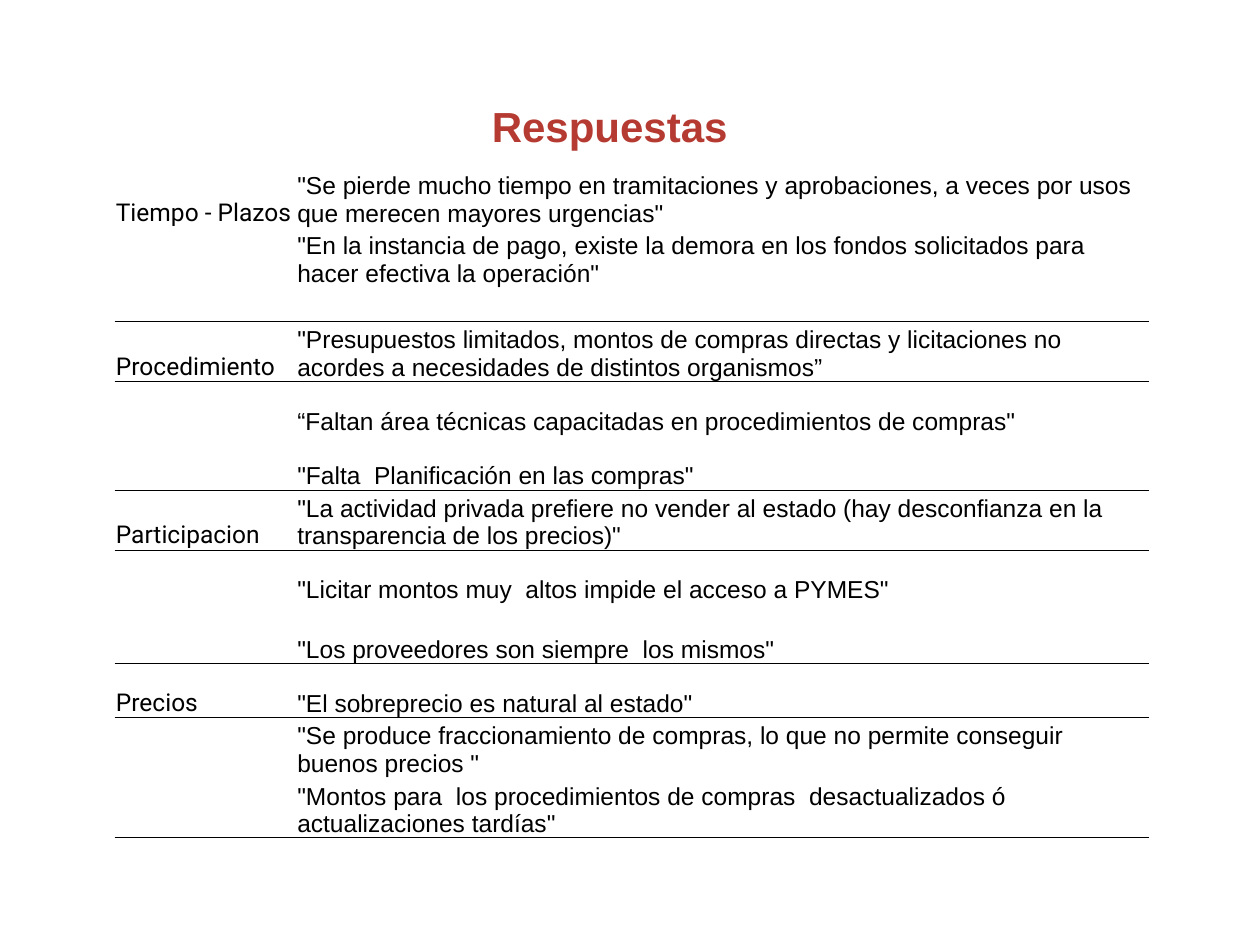
"""Build the slide of survey answers grouped by topic."""
import lxml.etree
import pptx
import pptx.dml.color
import pptx.enum.text
import pptx.oxml.ns
import pptx.util

THEME = {
    "title": {"name": "Arial", "size": pptx.util.Pt(24), "bold": True, "color": "B53A31"},
    "topic": {"name": "Roboto", "size": pptx.util.Pt(14), "bold": False, "color": "000000"},
    "answer": {"name": "Arial", "size": pptx.util.Pt(14), "bold": False, "color": "000000"},
    "rule": {"color": "000000", "width": pptx.util.Pt(0.5)},
    "table_style": "{2D5ABB26-0587-4C30-8999-92F81FD0307C}",
}
COLUMNS = [1.44, 5.8, 0.97]
TOPICS = [
    ("Tiempo - Plazos", [0.47, 0.46, 0.27], [
        '"Se pierde mucho tiempo en tramitaciones y aprobaciones, a veces por usos que merecen mayores urgencias"',
        '"En la instancia de pago, existe la demora en los fondos solicitados para hacer efectiva la operación"',
        ""]),
    ("Procedimiento", [0.47, 0.43, 0.43], [
        '"Presupuestos limitados, montos de compras directas y licitaciones no acordes a necesidades de distintos organismos”',
        '“Faltan área técnicas capacitadas en procedimientos de compras"',
        '"Falta  Planificación en las compras"']),
    ("Participacion", [0.47, 0.43, 0.47], [
        '"La actividad privada prefiere no vender al estado (hay desconfianza en la transparencia de los precios)"',
        '"Licitar montos muy  altos impide el acceso a PYMES"',
        '"Los proveedores son siempre  los mismos"']),
    ("Precios", [0.43, 0.46, 0.46], [
        '"El sobreprecio es natural al estado"',
        '"Se produce fraccionamiento de compras, lo que no permite conseguir buenos precios "',
        '"Montos para  los procedimientos de compras  desactualizados ó actualizaciones tardías"']),
]
CELL_FORMAT = {
    "margin_left": pptx.util.Inches(0.01),
    "margin_right": pptx.util.Inches(0.01),
    "margin_top": pptx.util.Inches(0.01),
    "margin_bottom": 0,
    "vertical_anchor": pptx.enum.text.MSO_ANCHOR.BOTTOM,
}
qn = pptx.oxml.ns.qn


def write(para, text, style):
    if text:
        span = para.add_run()
        span.text = text
        for key in ("name", "size", "bold"):
            setattr(span.font, key, style[key])
        span.font.color.rgb = pptx.dml.color.RGBColor.from_string(style["color"])
    else:
        size = str(int(style["size"].pt * 100))
        lxml.etree.SubElement(para._p, qn("a:endParaRPr"), sz=size)


def add_rule(cell, side):
    line = lxml.etree.SubElement(
        cell._tc.get_or_add_tcPr(), qn(side), w=str(THEME["rule"]["width"]))
    fill = lxml.etree.SubElement(line, qn("a:solidFill"))
    lxml.etree.SubElement(fill, qn("a:srgbClr"), val=THEME["rule"]["color"])


deck = pptx.Presentation()
deck.slide_width = pptx.util.Inches(10)
deck.slide_height = pptx.util.Inches(7.5)
page = deck.slides.add_slide(deck.slide_layouts[6])
width, height = deck.slide_width, deck.slide_height

box = page.shapes.add_textbox(
    int(width * 0.083), int(height * 0.1), int(width * 0.811), int(height * 0.067))
box.text_frame.word_wrap = True
box.text_frame.auto_size = pptx.enum.text.MSO_AUTO_SIZE.SHAPE_TO_FIT_TEXT
title = box.text_frame.paragraphs[0]
title.alignment = pptx.enum.text.PP_ALIGN.CENTER
write(title, "Respuestas ", THEME["title"])

rows = [
    (topic if step == 0 else "", answer, row_height, step, step == len(answers) - 1)
    for topic, heights, answers in TOPICS
    for step, (answer, row_height) in enumerate(zip(answers, heights))
]
frame = page.shapes.add_table(
    len(rows), len(COLUMNS), int(width * 0.091), int(height * 0.177),
    pptx.util.Inches(sum(COLUMNS)), pptx.util.Inches(sum(row[2] for row in rows)))
table = frame.table
table.first_row = table.horz_banding = False
table._tbl.tblPr.find(qn("a:tableStyleId")).text = THEME["table_style"]
for column, column_width in zip(table.columns, COLUMNS):
    column.width = pptx.util.Inches(column_width)

for index, (topic, answer, row_height, step, closes) in enumerate(rows):
    table.rows[index].height = pptx.util.Inches(row_height)
    texts = [(topic, "topic"), (answer, "answer"), ("", "answer")]
    for number, (text, style) in enumerate(texts):
        cell = table.cell(index, number)
        for key, value in CELL_FORMAT.items():
            setattr(cell, key, value)
        if step == 0 and index > 0:
            add_rule(cell, "a:lnT")
        if closes:
            add_rule(cell, "a:lnB")
        cell.fill.background()
        write(cell.text_frame.paragraphs[0], text, THEME[style])
    if not answer.startswith('"Falta '):
        table.cell(index, 1).merge(table.cell(index, 2))

deck.save("out.pptx")
